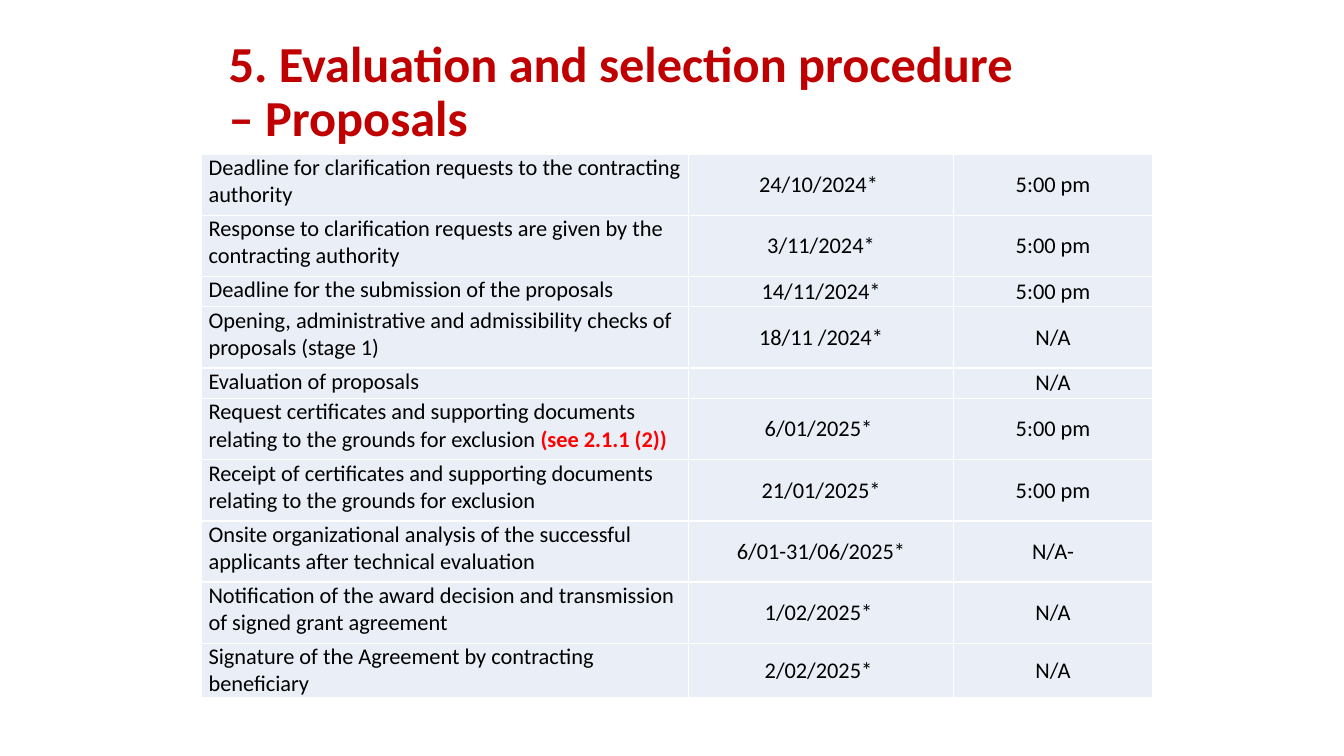
from dataclasses import dataclass

from lxml.etree import SubElement
from pptx import Presentation
from pptx.dml.color import RGBColor
from pptx.enum.text import MSO_ANCHOR as Anchor, PP_ALIGN as Align
from pptx.oxml.ns import qn
from pptx.util import Pt

FONT = "Calibri"
DARK_RED, RED, BLACK, WHITE, PALE_BLUE = "C00000", "FF0000", "000000", "FFFFFF", "EAEFF7"
COLUMN_WIDTHS = (347.8, 189.4, 142)
TWO_LINES, ONE_LINE, LAST_LINE = 43.7, 21.85, 39


@dataclass
class Step:
    task: str
    date: str
    time: str
    height: float = TWO_LINES
    note: str = ""


STEPS = [
    Step("Deadline for clarification requests to the contracting authority",
         "24/10/2024* ", "5:00 pm"),
    Step("Response to clarification requests are given by the contracting authority",
         "3/11/2024*", "5:00 pm"),
    Step("Deadline for the submission of the proposals", "14/11/2024*", "5:00 pm", ONE_LINE),
    Step("Opening, administrative and admissibility checks of proposals (stage 1)",
         "18/11 /2024*", "N/A"),
    Step("Evaluation of proposals", "", "N/A", ONE_LINE),
    Step("Request certificates and supporting documents relating to the grounds for exclusion ",
         "6/01/2025* ", "5:00 pm", note="(see 2.1.1 (2))"),
    Step("Receipt of certificates and supporting documents relating to the grounds for exclusion",
         "21/01/2025*", "5:00 pm"),
    Step("Onsite organizational analysis of the successful applicants after technical evaluation",
         "6/01-31/06/2025*", "N/A-"),
    Step("Notification of the award decision and transmission of signed grant agreement",
         "1/02/2025* ", "N/A"),
    Step("Signature of the Agreement by contracting beneficiary",
         "2/02/2025* ", "N/A", LAST_LINE),
]


def color(value: str) -> RGBColor:
    return RGBColor.from_string(value)


def add_span(para, text: str, *, size: float = 16, fill: str = BLACK, bold: bool = False) -> None:
    span = para.add_run()
    span.text = text
    span.font.name = FONT
    span.font.size = Pt(size)
    span.font.bold = bold
    span.font.color.rgb = color(fill)


def add_borders(cell) -> None:
    properties = cell._tc.get_or_add_tcPr()
    for position, side in enumerate(("lnL", "lnR", "lnT", "lnB")):
        line = properties.makeelement(qn(f"a:{side}"), {"w": str(Pt(1))})
        solid = SubElement(line, qn("a:solidFill"))
        SubElement(solid, qn("a:srgbClr"), val=WHITE)
        properties.insert(position, line)


def format_cell(cell, *, centered: bool):
    """Style a cell and return its paragraph."""
    cell.margin_left = cell.margin_right = Pt(5)
    cell.margin_top = cell.margin_bottom = Pt(0)
    cell.vertical_anchor = Anchor.MIDDLE if centered else Anchor.TOP
    cell.fill.solid()
    cell.fill.fore_color.rgb = color(PALE_BLUE)
    add_borders(cell)
    para = cell.text_frame.paragraphs[0]
    para.alignment = Align.CENTER if centered else Align.LEFT
    return para


def add_title(page, text: str) -> None:
    box = page.shapes.add_textbox(Pt(156.2), Pt(21.6), Pt(583.2), Pt(90))
    frame = box.text_frame
    frame.word_wrap = True
    frame.vertical_anchor = Anchor.MIDDLE
    para = frame.paragraphs[0]
    para.line_spacing = 0.9
    add_span(para, text, size=36, fill=DARK_RED, bold=True)


def add_timetable(page, steps: list[Step]) -> None:
    table = page.shapes.add_table(
        len(steps), len(COLUMN_WIDTHS), Pt(144), Pt(110),
        Pt(sum(COLUMN_WIDTHS)), Pt(sum(step.height for step in steps))).table
    table.first_row = table.horz_banding = False
    for column, width in zip(table.columns, COLUMN_WIDTHS):
        column.width = Pt(width)
    for row, step in zip(table.rows, steps):
        row.height = Pt(step.height)
        for index, text in enumerate((step.task, step.date, step.time)):
            para = format_cell(row.cells[index], centered=index > 0)
            add_span(para, text)
            if index == 0 and step.note:
                add_span(para, step.note, fill=RED, bold=True)


def main() -> None:
    deck = Presentation()
    deck.slide_width, deck.slide_height = Pt(960), Pt(540)
    page = deck.slides.add_slide(deck.slide_layouts[6])
    add_title(page, "5. Evaluation and selection procedure – Proposals")
    add_timetable(page, STEPS)
    deck.save("out.pptx")


if __name__ == "__main__":
    main()
